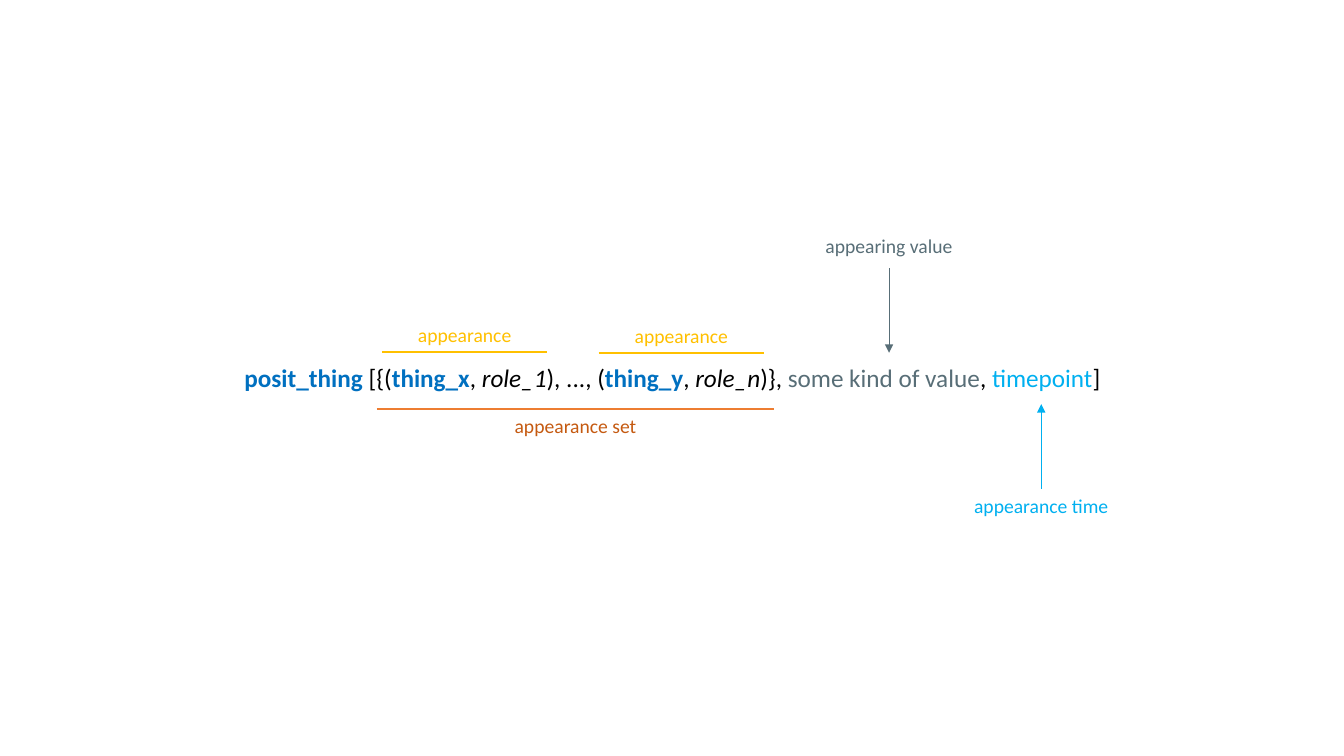
"""Build a slide that explains the parts of a posit."""
import pptx
import pptx.dml.color
import pptx.enum.shapes
import pptx.enum.text
import pptx.oxml
import pptx.oxml.ns
import pptx.util

RGBColor = pptx.dml.color.RGBColor
BLACK = RGBColor(0x00, 0x00, 0x00)
BLUE = RGBColor(0x00, 0x70, 0xC0)
SKY = RGBColor(0x00, 0xB0, 0xF0)
SLATE = RGBColor(0x58, 0x6E, 0x77)
GOLD = RGBColor(0xFF, 0xC0, 0x00)
ORANGE = RGBColor(0xED, 0x7D, 0x31)
RUST = RGBColor(0xC5, 0x5A, 0x11)

FONT = "Calibri"
COLUMNS, ROWS = 133.33, 75
CELL = pptx.util.Inches(0.1)
LABEL_HEIGHT = 3.4
ARROW_LENGTH = 8.4

POSIT = [
    ("posit_thing", BLUE, True, False),
    (" [{(", BLACK, False, False),
    ("thing_x", BLUE, True, False),
    (", ", BLACK, False, False),
    ("role_1", BLACK, False, True),
    ("), ..., (", BLACK, False, False),
    ("thing_y", BLUE, True, False),
    (", ", BLACK, False, False),
    ("role_n", BLACK, False, True),
    (")}, ", BLACK, False, False),
    ("some kind of value", SLATE, False, False),
    (", ", BLACK, False, False),
    ("timepoint", SKY, False, False),
    ("]", BLACK, False, False),
]


def cells(count):
    """Turn a number of grid cells into a length."""
    return round(count * CELL)


def add_text(page, left, top, width, height, spans, size, wrap):
    """Add a centred line of text made of (words, colour, bold, italic) spans."""
    box = page.shapes.add_textbox(*map(cells, (left, top, width, height)))
    frame = box.text_frame
    frame.word_wrap = wrap
    frame.auto_size = pptx.enum.text.MSO_AUTO_SIZE.SHAPE_TO_FIT_TEXT
    para = frame.paragraphs[0]
    para.alignment = pptx.enum.text.PP_ALIGN.CENTER
    for words, colour, bold, italic in spans:
        span = para.add_run()
        span.text = words
        span.font.name = FONT
        span.font.size = pptx.util.Pt(size)
        span.font.bold = bold
        span.font.italic = italic
        span.font.color.rgb = colour


def add_label(page, words, middle, top, width, colour):
    """Add a label centred on the given column."""
    spans = [(words, colour, False, False)]
    add_text(page, middle - width / 2, top, width, LABEL_HEIGHT, spans, 14, False)


def add_line(page, start, end, colour, weight, arrow=False):
    """Add a straight line between two grid points, with an optional arrowhead."""
    line = page.shapes.add_connector(
        pptx.enum.shapes.MSO_CONNECTOR.STRAIGHT, *map(cells, start + end))
    line.line.color.rgb = colour
    line.line.width = pptx.util.Pt(weight)
    if arrow:
        head = pptx.oxml.parse_xml(
            f'<a:tailEnd {pptx.oxml.ns.nsdecls("a")} type="triangle"/>')
        line.line._get_or_add_ln().append(head)
    effects = pptx.oxml.parse_xml(f'<a:effectLst {pptx.oxml.ns.nsdecls("a")}/>')
    line._element.spPr.append(effects)


def add_span_mark(page, words, left, right, row, label_top, label_width, colours):
    """Mark a stretch of the posit with a rule and a label at its middle."""
    line_colour, text_colour = colours
    add_line(page, (left, row), (right, row), line_colour, 1.5)
    add_label(page, words, (left + right) / 2, label_top, label_width, text_colour)


def add_pointer(page, words, column, start, tip, label_top, label_width, colour):
    """Point at a part of the posit with an arrow and a label at its tail."""
    add_line(page, (column, start), (column, tip), colour, 0.5, arrow=True)
    add_label(page, words, column, label_top, label_width, colour)


def main():
    """Create the deck and save it."""
    deck = pptx.Presentation()
    deck.slide_width, deck.slide_height = cells(COLUMNS), cells(ROWS)
    page = deck.slides.add_slide(deck.slide_layouts[6])

    add_text(page, 18, 35.5, 97.4, 4, POSIT, 18, True)
    for left, row in ((37.9, 34.9), (59.4, 35)):
        add_span_mark(page, "appearance", left, left + 16.4, row,
                      row - LABEL_HEIGHT, 11.4, (GOLD, GOLD))
    add_span_mark(page, "appearance set", 37.4, 76.8, 40.6, 40.6, 14.2,
                  (ORANGE, RUST))
    add_pointer(page, "appearing value", 88.2, 35 - ARROW_LENGTH, 35, 22.7,
                14.8, SLATE)
    add_pointer(page, "appearance time", 103.3, 40.1 + ARROW_LENGTH, 40.1, 48.5,
                15.5, SKY)

    deck.save("out.pptx")


if __name__ == "__main__":
    main()
